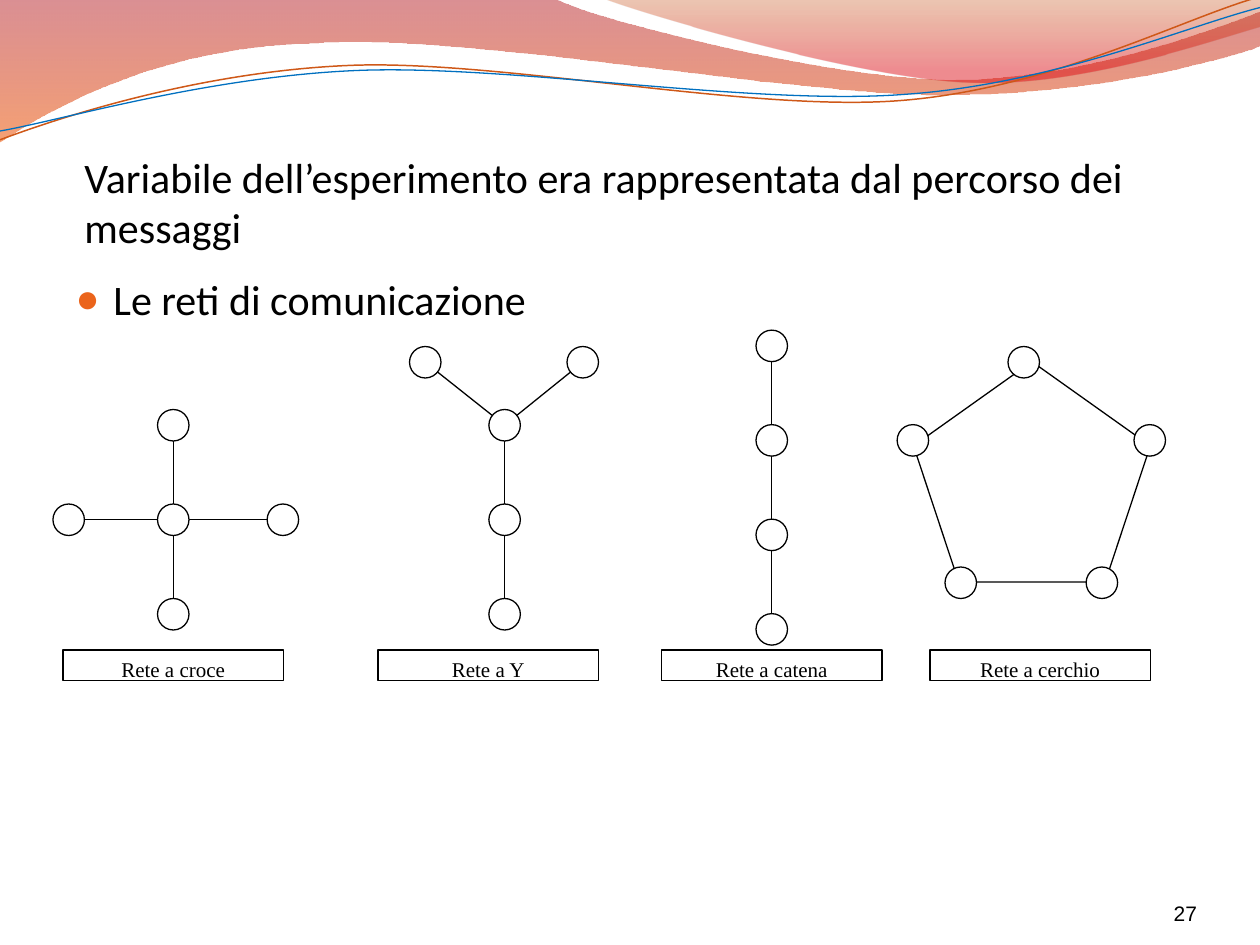
from lxml.etree import SubElement
from pptx import Presentation
from pptx.dml.color import RGBColor
from pptx.enum.shapes import MSO_CONNECTOR, MSO_SHAPE
from pptx.enum.text import MSO_ANCHOR, MSO_AUTO_SIZE, PP_ALIGN
from pptx.oxml.ns import qn
from pptx.util import Emu, Pt

EMU_PER_PX = 9144  # 100 px to the inch
NODE = 25

BLACK = RGBColor(0x00, 0x00, 0x00)
WHITE = RGBColor(0xFF, 0xFF, 0xFF)
CRIMSON = RGBColor(0xAF, 0x09, 0x11)
ORANGE = RGBColor(0xEE, 0x53, 0x00)
RUST = RGBColor(0xC2, 0x44, 0x00)
RED = RGBColor(0xDC, 0x00, 0x0B)
COPPER = RGBColor(0xCF, 0x58, 0x18)
BLUE = RGBColor(0x00, 0x70, 0xC0)
BULLET_ORANGE = RGBColor(0xEB, 0x64, 0x1B)

# Each outline: first point, then segments of one point (line) or three (Bezier curve).
LEFT_BAND = [
    [(0, 0)], [(440, -1)],
    [(476, 17), (664, 63), (758, 63)], [(853, 63), (958, 26), (1000, 9)],
    [(1001, 36)],
    [(983, 44), (870, 76), (746, 75)], [(622, 75), (382, 28), (257, 34)],
    [(129, 36), (46, 83), (-1, 113)],
]
RIGHT_BAND = [
    [(479, -1)],
    [(509, 11), (682, 62), (769, 65)], [(856, 69), (961, 32), (1000, 21)],
    [(1000, 0)],
]
COPPER_WAVE = [
    [(0, 111)], [(48, 93), (158, 57), (277, 52)],
    [(395, 47), (593, 89), (713, 80)], [(833, 71), (938, 15), (998, -2)],
]
BLUE_WAVE = [
    [(0, 104)], [(47, 96), (164, 61), (283, 56)],
    [(403, 51), (597, 84), (717, 75)], [(836, 67), (941, 21), (1000, 6)],
]

# Networks: label, label left, box left and top, node offsets, edges between nodes.
NETWORKS = [
    ("Rete a croce", 50, 42, 325,
     [(83, 0), (83, 75), (83, 150), (0, 75), (170, 75)], [(0, 2), (3, 4)]),
    ("Rete a Y", 300, 325, 275,
     [(0, 0), (125, 0), (63, 50), (63, 125), (63, 200)], [(0, 2), (1, 2), (2, 4)]),
    ("Rete a catena", 525, 600, 262,
     [(0, 75 * i) for i in range(4)], [(0, 3)]),
    ("Rete a cerchio", 738, 712, 275,
     [(88, 0), (188, 62), (150, 175), (38, 175), (0, 62)], []),
]


def px(*values):
    lengths = [Emu(round(value * EMU_PER_PX)) for value in values]
    return lengths if len(lengths) > 1 else lengths[0]


def add_outline(shapes, segments, close):
    """Build a freeform and bend each three-point segment into one Bezier curve."""
    points = [px(*point) for segment in segments for point in segment]
    builder = shapes.build_freeform(*points[0])
    builder.add_line_segments(points[1:], close=close)
    shape = builder.convert_to_shape()
    shape.shadow.inherit = False
    lines = iter(list(shape._element.iter(qn("a:lnTo"))))
    for segment in segments[1:]:
        curve = next(lines)
        if len(segment) == 3:
            curve.tag = qn("a:cubicBezTo")
            for line in (next(lines), next(lines)):
                curve.append(line[0])
                line.getparent().remove(line)
    return shape


def add_band(shapes, segments, stops):
    """Add a translucent band; stops are (position, colour, opacity percent)."""
    shape = add_outline(shapes, segments, True)
    shape.line.fill.background()
    shape.fill.gradient()
    shape.fill.gradient_angle = 270
    for gradient_stop, (position, color, opacity) in zip(shape.fill.gradient_stops, stops):
        gradient_stop.position = position
        gradient_stop.color.rgb = color
    for color_element, stop in zip(shape._element.spPr.iter(qn("a:srgbClr")), stops):
        SubElement(color_element, qn("a:alpha"), val=str(stop[2] * 1000))
    return shape


def add_wave(shapes, segments, color, width):
    shape = add_outline(shapes, segments, False)
    shape.fill.background()
    shape.line.color.rgb = color
    shape.line.width = Pt(width)
    return shape


def add_header(slide):
    """Draw the bands and waves, then hand them to the layout as its decoration."""
    shapes = slide.shapes
    decoration = [
        add_band(shapes, LEFT_BAND, [(0, CRIMSON, 45), (1, ORANGE, 55)]),
        add_band(shapes, RIGHT_BAND, [(0, RUST, 30), (0.8, RED, 45)]),
        add_wave(shapes, COPPER_WAVE, COPPER, 0.85),
        add_wave(shapes, BLUE_WAVE, BLUE, 0.75),
    ]
    layout_tree = slide.slide_layout.shapes._spTree
    for number, shape in enumerate(decoration):
        shape._element.nvSpPr.cNvPr.set("id", str(100 + number))
        layout_tree.append(shape._element)


def place(shape, left, top, width, height):
    shape.left, shape.top, shape.width, shape.height = px(left, top, width, height)


def write(paragraph, text, font_name, size, alignment=PP_ALIGN.LEFT):
    paragraph.alignment = alignment
    run = paragraph.add_run()
    run.text = text
    run.font.name = font_name
    run.font.size = Pt(size)
    run.font.color.rgb = BLACK


def set_insets(frame, left, top, right, bottom):
    frame.margin_left, frame.margin_top, frame.margin_right, frame.margin_bottom = px(
        left, top, right, bottom)


def add_title(title, box):
    place(title, *box)
    frame = title.text_frame
    frame.auto_size = MSO_AUTO_SIZE.NONE
    frame.vertical_anchor = MSO_ANCHOR.BOTTOM
    set_insets(frame, 0, 5, 0, 0)
    write(frame.paragraphs[0],
          "Variabile dell’esperimento era rappresentata dal percorso dei messaggi",
          "Calibri", 24)


def add_body(body, box):
    place(body, *box)
    body.text_frame.auto_size = MSO_AUTO_SIZE.NONE
    paragraph = body.text_frame.paragraphs[0]
    paragraph.space_before = Pt(0)
    properties = paragraph._p.get_or_add_pPr()
    properties.set("marL", str(px(30)))
    properties.set("indent", str(px(-30)))
    bullet_color = SubElement(properties, qn("a:buClr"))
    SubElement(bullet_color, qn("a:srgbClr"), val=str(BULLET_ORANGE))
    SubElement(properties, qn("a:buSzPct"), val="95000")
    SubElement(properties, qn("a:buChar"), char="●")
    write(paragraph, "Le reti di comunicazione", "Calibri", 24)


def add_slide_number(shapes, box):
    frame = shapes.add_textbox(*px(*box)).text_frame
    frame.word_wrap = True
    frame.vertical_anchor = MSO_ANCHOR.BOTTOM
    set_insets(frame, 0, 0, 0, 0)
    write(frame.paragraphs[0], "27", "Arial", 12, PP_ALIGN.RIGHT)


def add_outlined_shape(shapes, kind, *box):
    shape = shapes.add_shape(kind, *px(*box))
    shape.shadow.inherit = False
    shape.fill.solid()
    shape.fill.fore_color.rgb = WHITE
    shape.line.color.rgb = BLACK
    shape.line.width = Pt(0.75)
    return shape


def add_edge(shapes, start, end):
    connector = shapes.add_connector(MSO_CONNECTOR.STRAIGHT, *px(*start, *end))
    connector.line.color.rgb = BLACK
    connector.line.width = Pt(0.75)
    SubElement(connector._element.spPr, qn("a:effectLst"))


def add_network(shapes, label, label_left, left, top, nodes, edges):
    centers = [(left + x + NODE / 2, top + y + NODE / 2) for x, y in nodes]
    for start, end in edges:
        add_edge(shapes, centers[start], centers[end])
    if not edges:
        ring = add_outlined_shape(shapes, MSO_SHAPE.REGULAR_PENTAGON,
                                  left + 13, top + 12, 188, 175)
        ring.fill.background()
    for x, y in nodes:
        add_outlined_shape(shapes, MSO_SHAPE.OVAL, left + x, top + y, NODE, NODE)
    caption = add_outlined_shape(shapes, MSO_SHAPE.RECTANGLE, label_left, 516, 175, 24)
    caption.text_frame.vertical_anchor = MSO_ANCHOR.TOP
    write(caption.text_frame.paragraphs[0], label, "Times New Roman", 12, PP_ALIGN.CENTER)


def main():
    presentation = Presentation()
    presentation.slide_width, presentation.slide_height = px(1000, 750)
    slide = presentation.slides.add_slide(presentation.slide_layouts[1])
    shapes = slide.shapes
    add_header(slide)
    add_title(shapes.title, (67, 108, 867, 92))
    add_body(slide.placeholders[1], (50, 212, 900, 480))
    add_slide_number(shapes, (867, 695, 83, 40))
    for network in NETWORKS:
        add_network(shapes, *network)
    presentation.save("out.pptx")


if __name__ == "__main__":
    main()
